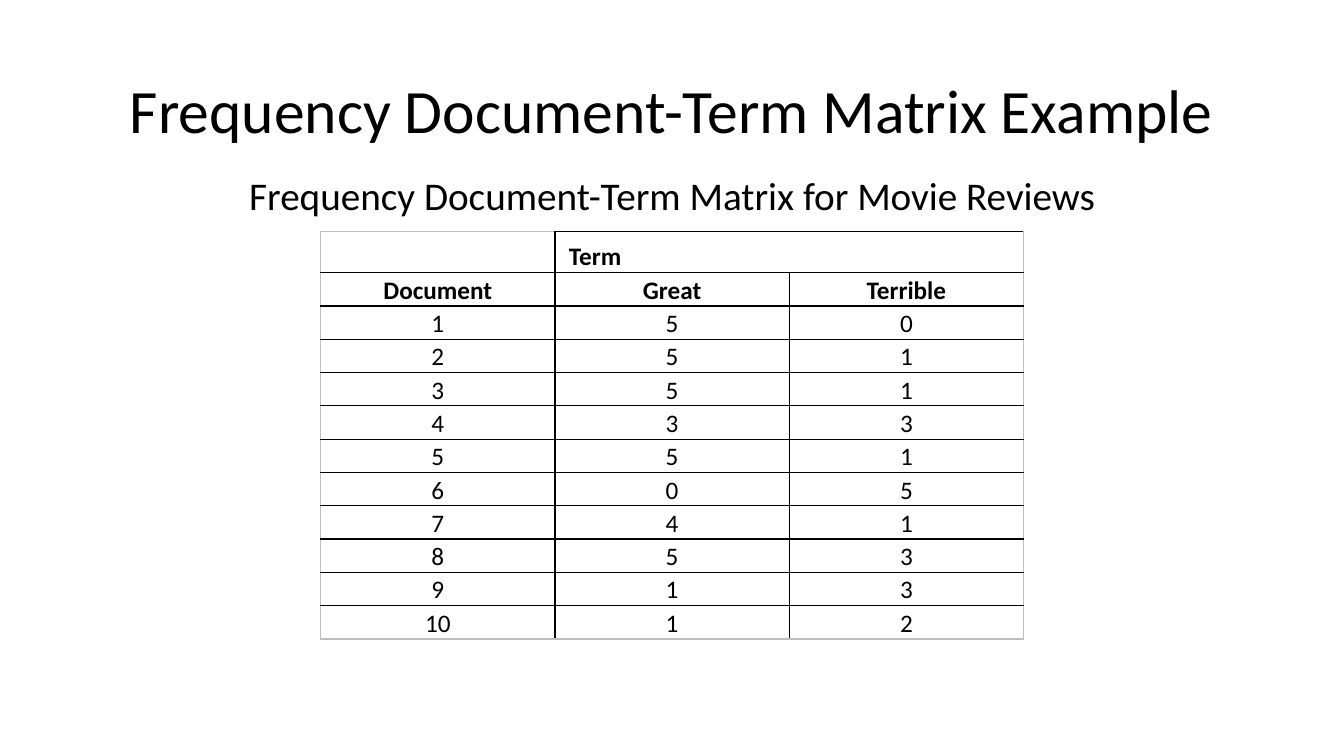
from dataclasses import dataclass
from typing import Any

from lxml.etree import SubElement
from pptx import Presentation
from pptx.dml.color import RGBColor
from pptx.enum.text import MSO_ANCHOR, PP_ALIGN
from pptx.oxml.ns import qn
from pptx.util import Pt

BLACK = RGBColor(0, 0, 0)
GREY = RGBColor(0xBF, 0xBF, 0xBF)
FONT = "Calibri"
PAD = Pt(10)
ROWS = [
    ("", "Term", ""),
    ("Document", "Great", "Terrible"),
    (1, 5, 0),
    (2, 5, 1),
    (3, 5, 1),
    (4, 3, 3),
    (5, 5, 1),
    (6, 0, 5),
    (7, 4, 1),
    (8, 5, 3),
    (9, 1, 3),
    (10, 1, 2),
]


@dataclass
class Label:
    text: str
    size: float
    bold: bool = False
    align: PP_ALIGN = PP_ALIGN.CENTER
    space: float = 1.0


@dataclass
class Edge:
    tag: str
    color: RGBColor


def apply(item: Any, values: dict[str, Any]) -> None:
    for name, value in values.items():
        setattr(item, name, value)


def write(frame: Any, label: Label) -> None:
    frame.text = label.text
    para = frame.paragraphs[0]
    apply(para, {"alignment": label.align, "line_spacing": label.space})
    for font in (para.font, *(run.font for run in para.runs)):
        apply(font, {"name": FONT, "size": Pt(label.size), "bold": label.bold})
        font.color.rgb = BLACK


def place(shape: Any, left: float, top: float, width: float, height: float) -> None:
    apply(shape, {"left": Pt(left), "top": Pt(top),
                  "width": Pt(width), "height": Pt(height)})


def border(cell: Any, edge: Edge) -> None:
    line = SubElement(cell._tc.get_or_add_tcPr(), qn(f"a:{edge.tag}"), w=str(Pt(1)))
    fill = SubElement(line, qn("a:solidFill"))
    SubElement(fill, qn("a:srgbClr"), val=str(edge.color))


def edges(row: int, col: int) -> list[Edge]:
    return [
        Edge("lnL", GREY if col == 0 else BLACK),
        Edge("lnR", GREY if col == 2 or (row, col) == (0, 1) else BLACK),
        Edge("lnT", GREY if row == 0 and col != 1 else BLACK),
        Edge("lnB", GREY if row == len(ROWS) - 1 else BLACK),
    ]


def matrix(slide: Any) -> None:
    frame = slide.shapes.add_table(len(ROWS), 3, Pt(229), Pt(165.6), Pt(502.2), Pt(291))
    table = frame.table
    apply(table, {"first_row": False, "horz_banding": False})
    for col in table.columns:
        col.width = Pt(167.4)
    for r, values in enumerate(ROWS):
        table.rows[r].height = Pt(23.8 if r else 29.2)
        for c, value in enumerate(values):
            cell = table.cell(r, c)
            apply(cell, {"margin_left": PAD, "margin_right": PAD,
                         "margin_top": 0, "margin_bottom": 0,
                         "vertical_anchor": MSO_ANCHOR.BOTTOM})
            for edge in edges(r, c):
                border(cell, edge)
            cell.fill.background()
            align = PP_ALIGN.CENTER if r else PP_ALIGN.LEFT
            write(cell.text_frame, Label(str(value), 18, r < 2, align, 1.07))
    table.cell(0, 1).merge(table.cell(0, 2))


def main() -> None:
    deck = Presentation()
    apply(deck, {"slide_width": Pt(960), "slide_height": Pt(540)})
    slide = deck.slides.add_slide(deck.slide_layouts[5])
    title = slide.shapes.title
    place(title, 66, 28.8, 828, 104.4)
    title.text_frame.vertical_anchor = MSO_ANCHOR.MIDDLE
    write(title.text_frame, Label("Frequency Document-Term Matrix Example", 44, space=0.9))
    matrix(slide)
    note = slide.shapes.add_textbox(0, Pt(118.8), Pt(960), Pt(41.2))
    note.text_frame.word_wrap = True
    write(note.text_frame, Label("Frequency Document-Term Matrix for Movie Reviews", 28))
    deck.save("out.pptx")


if __name__ == "__main__":
    main()
